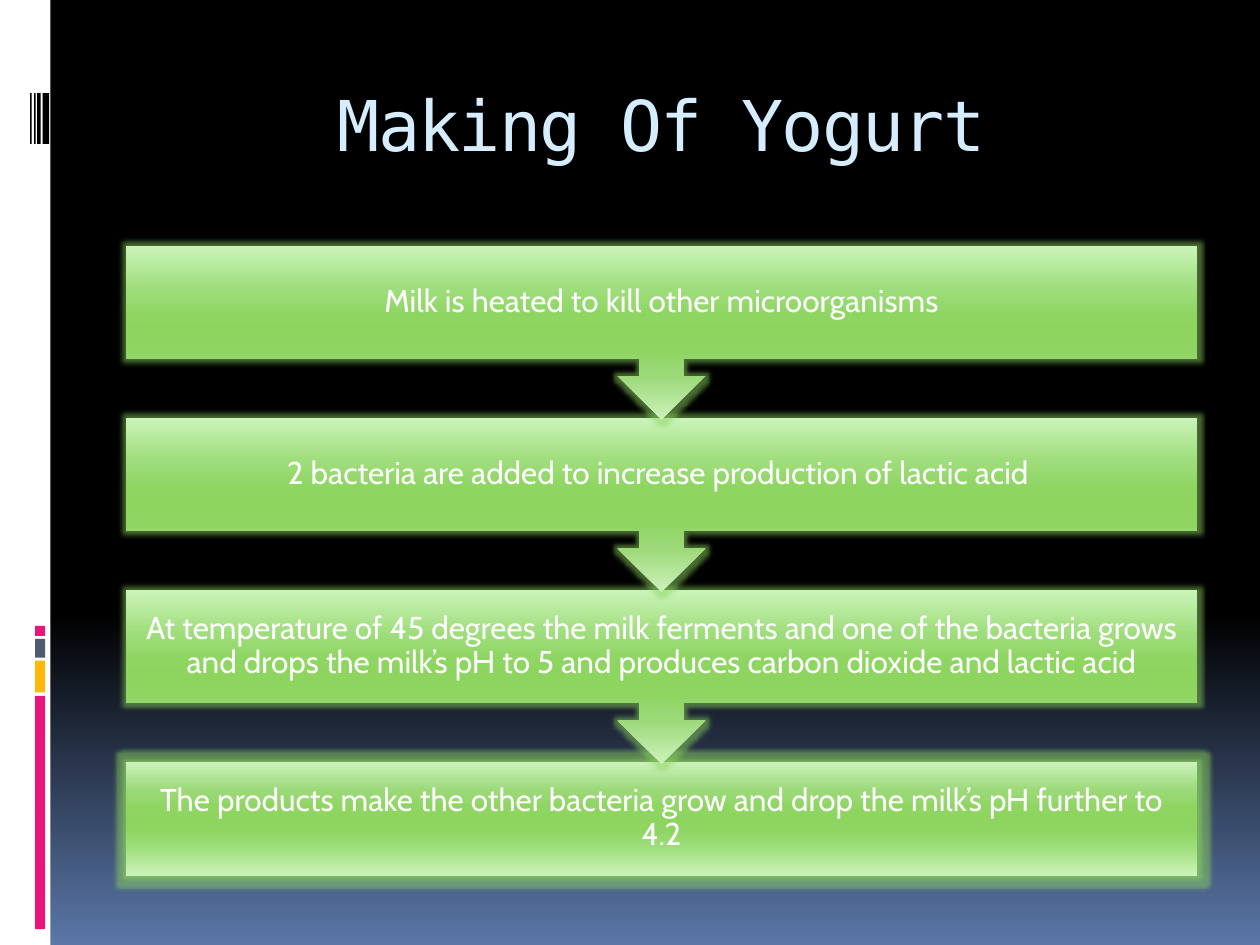
"""Build the yogurt-making process slide."""
from lxml.etree import SubElement
from pptx import Presentation
from pptx.dml.color import RGBColor
from pptx.enum.shapes import MSO_SHAPE
from pptx.enum.text import MSO_ANCHOR, PP_ALIGN
from pptx.oxml.ns import qn
from pptx.util import Cm, Pt

COLORS = {"white": "FFFFFF", "black": "000000", "pink": "EA157A", "amber": "FEB80A",
          "slate": "4E5B6F", "title": "D6ECFF", "glow": "8DD55F"}
SKY = [(0, "000000"), (65, "000000"), (100, "5B77A8")]
GREEN = [(0, "CCF2BB"), (25, "9CD979"), (40, "8FD562"), (50, "8DD55F"),
         (60, "8FD562"), (75, "9EDD7B"), (100, "CBF4B9")]
BARS = [
    (0, 0, 1.02, 19.05, "white"),
    (0.71, 14.03, 0.2, 4.7, "pink"),
    (0.71, 13.32, 0.2, 0.64, "amber"),
    (0.71, 12.88, 0.2, 0.38, "slate"),
    (0.71, 12.62, 0.2, 0.2, "pink"),
    (0.86, 1.88, 0.13, 1.02, "black"),
    (0.75, 1.88, 0.07, 1.02, "black"),
    (0.69, 1.88, 0.03, 1.02, "black"),
    (0.61, 1.88, 0.03, 1.02, "black"),
]
STEPS = [
    "Milk is heated to kill other microorganisms",
    "2 bacteria are added to increase production of lactic acid ",
    "At temperature of 45 degrees the milk ferments and one of the bacteria grows "
    "and drops the milk’s pH to 5 and produces carbon dioxide and lactic acid",
    "The products make the other bacteria grow and drop the milk’s pH further to 4.2",
]
LEFT, TOP, WIDTH, PITCH = 2.54, 4.95, 21.59, 3.47
BOX_HEIGHT, CALLOUT_HEIGHT = 2.29, 3.51


def set_gradient(owner, fill, stops):
    fill.gradient()
    fill.gradient_angle = 270
    gs_list = owner._element.find(".//" + qn("a:gsLst"))
    for gs in list(gs_list):
        gs_list.remove(gs)
    for position, color in stops:
        gs = SubElement(gs_list, qn("a:gs"), pos=str(position * 1000))
        SubElement(gs, qn("a:srgbClr"), val=color)


def add_plain_shape(s, kind, left, top, width, height):
    shape = s.shapes.add_shape(kind, Cm(left), Cm(top), Cm(width), Cm(height))
    shape.shadow.inherit = False
    shape.line.fill.background()
    return shape


prs = Presentation()
prs.slide_width, prs.slide_height = Cm(25.4), Cm(19.05)
s = prs.slides.add_slide(prs.slide_layouts[5])
set_gradient(s, s.background.fill, SKY)

for left, top, width, height, color in BARS:
    bar = add_plain_shape(s, MSO_SHAPE.RECTANGLE, left, top, width, height)
    bar.fill.solid()
    bar.fill.fore_color.rgb = RGBColor.from_string(COLORS[color])

title = s.shapes.title
title.left, title.top, title.width, title.height = Cm(LEFT), Cm(1.42), Cm(WIDTH), Cm(2.54)
tf = title.text_frame
tf.text = "Making Of Yogurt"
tf.vertical_anchor = MSO_ANCHOR.TOP
tf.margin_top = Cm(0.23)
p = tf.paragraphs[0]
p.alignment = PP_ALIGN.CENTER
p.font.name, p.font.size = "DejaVu Sans Mono", Pt(40)
p.font.color.rgb = RGBColor.from_string(COLORS["title"])
p.runs[0].font._element.set("spc", "-100") if hasattr(p.runs[0].font, "_element") else \
    p.runs[0]._r.get_or_add_rPr().set("spc", "-100")

for i, text in reversed(list(enumerate(STEPS))):
    top = TOP + i * PITCH
    if i == len(STEPS) - 1:
        box = add_plain_shape(s, MSO_SHAPE.RECTANGLE, LEFT, top, WIDTH, BOX_HEIGHT)
    else:
        box = add_plain_shape(s, MSO_SHAPE.UP_ARROW_CALLOUT, LEFT, top, WIDTH, CALLOUT_HEIGHT)
        box.rotation = 180
    set_gradient(box, box.fill, GREEN)
    effects = box._element.spPr.find(qn("a:effectLst"))
    glow = SubElement(effects, qn("a:glow"), rad=str(Pt(5)))
    color = SubElement(glow, qn("a:srgbClr"), val=COLORS["glow"])
    SubElement(color, qn("a:alpha"), val="50000")

    label = s.shapes.add_textbox(Cm(LEFT), Cm(top), Cm(WIDTH), Cm(BOX_HEIGHT))
    tf = label.text_frame
    tf.word_wrap = True
    tf.vertical_anchor = MSO_ANCHOR.MIDDLE
    tf.margin_left = tf.margin_right = tf.margin_top = tf.margin_bottom = Cm(0.36)
    tf.text = text
    p = tf.paragraphs[0]
    p.alignment = PP_ALIGN.CENTER
    p.line_spacing = 0.9
    p.font.name, p.font.size = "Cabin", Pt(18)
    p.font.color.rgb = RGBColor.from_string(COLORS["white"])

prs.save("out.pptx")
